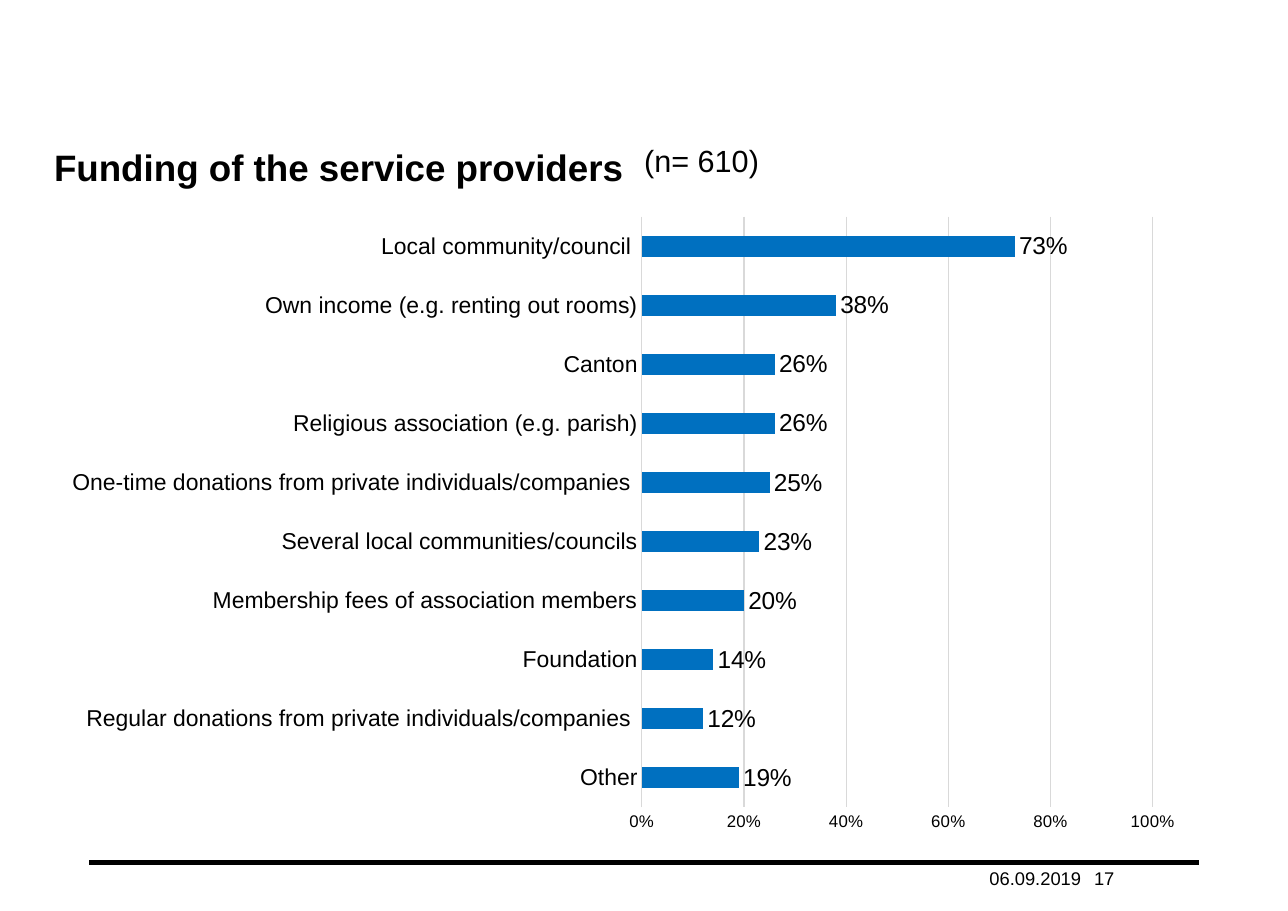
from lxml.etree import SubElement
from pptx import Presentation
from pptx.chart.data import CategoryChartData
from pptx.dml.color import RGBColor
from pptx.enum.chart import XL_CHART_TYPE, XL_LABEL_POSITION, XL_TICK_MARK
from pptx.enum.shapes import MSO_CONNECTOR
from pptx.enum.text import MSO_ANCHOR, PP_ALIGN
from pptx.oxml import parse_xml
from pptx.oxml.ns import nsdecls, qn
from pptx.util import Inches, Pt

WIDTH, HEIGHT = 11.69, 8.27
BLACK, GREY, BLUE = "000000", "D9D9D9", "0070C0"
FONT = "Arial"

FUNDING = [
    ("Local community/council ", 0.73),
    ("Own income (e.g. renting out rooms)", 0.38),
    ("Canton", 0.26),
    ("Religious association (e.g. parish)", 0.26),
    ("One-time donations from private individuals/companies ", 0.25),
    ("Several local communities/councils", 0.23),
    ("Membership fees of association members", 0.20),
    ("Foundation", 0.14),
    ("Regular donations from private individuals/companies ", 0.12),
    ("Other", 0.19),
]


def color(value):
    return RGBColor.from_string(value)


def style_font(font, size, bold=False):
    font.name, font.size, font.bold = FONT, Pt(size), bold
    font.color.rgb = color(BLACK)


def style_line(line, value, width):
    line.color.rgb = color(value)
    line.width = Pt(width)


def write(frame, text, size, anchor, bold=False, align=PP_ALIGN.LEFT, wrap=True):
    frame.margin_left = frame.margin_right = frame.margin_top = frame.margin_bottom = 0
    frame.word_wrap = wrap
    frame.vertical_anchor = anchor
    frame.text = text
    frame.paragraphs[0].alignment = align
    style_font(frame.paragraphs[0].runs[0].font, size, bold)


def add_heading(slide, left, top, width, height):
    # Title with the sample size beside it
    title = slide.shapes.title
    title.left, title.top = Inches(left), Inches(top)
    title.width, title.height = Inches(width), Inches(height)
    write(title.text_frame, "Funding of the service providers", 24,
          MSO_ANCHOR.MIDDLE, bold=True)
    sample = slide.shapes.add_textbox(
        Inches(left + 5.35), Inches(top - 0.02), Inches(1.05), Inches(0.36))
    write(sample.text_frame, "(n= 610)", 20, MSO_ANCHOR.TOP,
          align=PP_ALIGN.RIGHT, wrap=False)


def place_plot(chart, **shares):
    # Fix the inner plot area so that the long labels stay on one line
    plot_area = chart._chartSpace.chart.plotArea
    for old in plot_area.findall(qn("c:layout")):
        plot_area.remove(old)
    layout = parse_xml(f"<c:layout {nsdecls('c')}><c:manualLayout/></c:layout>")
    settings = {"layoutTarget": "inner", "xMode": "edge", "yMode": "edge", **shares}
    for tag, value in settings.items():
        SubElement(layout[0], qn(f"c:{tag}")).set("val", str(value))
    plot_area.insert(0, layout)


def add_funding_chart(slide, left, top, width, height):
    # Bars run upwards, so the rows are reversed
    data = CategoryChartData(number_format="0%")
    names, shares = zip(*reversed(FUNDING))
    data.categories = names
    data.add_series("Series 1", shares)
    chart = slide.shapes.add_chart(
        XL_CHART_TYPE.BAR_CLUSTERED, Inches(left), Inches(top),
        Inches(width), Inches(height), data).chart
    chart.has_legend = chart.has_title = False
    style_font(chart.font, 11)
    place_plot(chart, x=0.515, y=0.02, w=0.445, h=0.92)

    # Bars and their values
    plot = chart.plots[0]
    plot.gap_width = 182
    plot.vary_by_categories = False
    bars = plot.series[0]
    bars.format.fill.solid()
    bars.format.fill.fore_color.rgb = color(BLUE)
    labels = bars.data_labels
    labels.show_value = True
    labels.position = XL_LABEL_POSITION.OUTSIDE_END
    labels.number_format, labels.number_format_is_linked = "0%", False
    style_font(labels.font, 16)

    # Axes and gridlines
    sources, percent = chart.category_axis, chart.value_axis
    for axis, size in ((sources, 15), (percent, 11)):
        axis.major_tick_mark = axis.minor_tick_mark = XL_TICK_MARK.NONE
        style_font(axis.tick_labels.font, size)
    style_line(sources.format.line, GREY, 0.75)
    percent.format.line.fill.background()
    percent.minimum_scale, percent.maximum_scale, percent.major_unit = 0, 1, 0.2
    percent.tick_labels.number_format = "0%"
    percent.tick_labels.number_format_is_linked = False
    percent.has_major_gridlines = True
    style_line(percent.major_gridlines.format.line, GREY, 0.75)


def add_footer(slide, left, top, width):
    # Rule, then date and page number below its right end
    rule = slide.shapes.add_connector(
        MSO_CONNECTOR.STRAIGHT, Inches(left), Inches(top),
        Inches(left + width), Inches(top))
    style_line(rule.line, BLACK, 3)
    SubElement(rule._element.spPr, qn("a:effectLst"))
    cell = 0.95
    for column, text in enumerate(("06.09.2019", "17")):
        box = slide.shapes.add_textbox(
            Inches(left + width - (2 - column) * cell), Inches(top + 0.04),
            Inches(cell), Inches(0.2))
        write(box.text_frame, text, 12, MSO_ANCHOR.BOTTOM)


def main():
    deck = Presentation()
    deck.slide_width, deck.slide_height = Inches(WIDTH), Inches(HEIGHT)
    slide = deck.slides.add_slide(deck.slide_layouts[5])
    add_heading(slide, 0.49, 1.31, 10.08, 0.4)
    add_funding_chart(slide, 0.46, 1.85, 10.42, 5.83)
    add_footer(slide, 0.81, 7.83, 10.07)
    deck.save("out.pptx")


if __name__ == "__main__":
    main()
